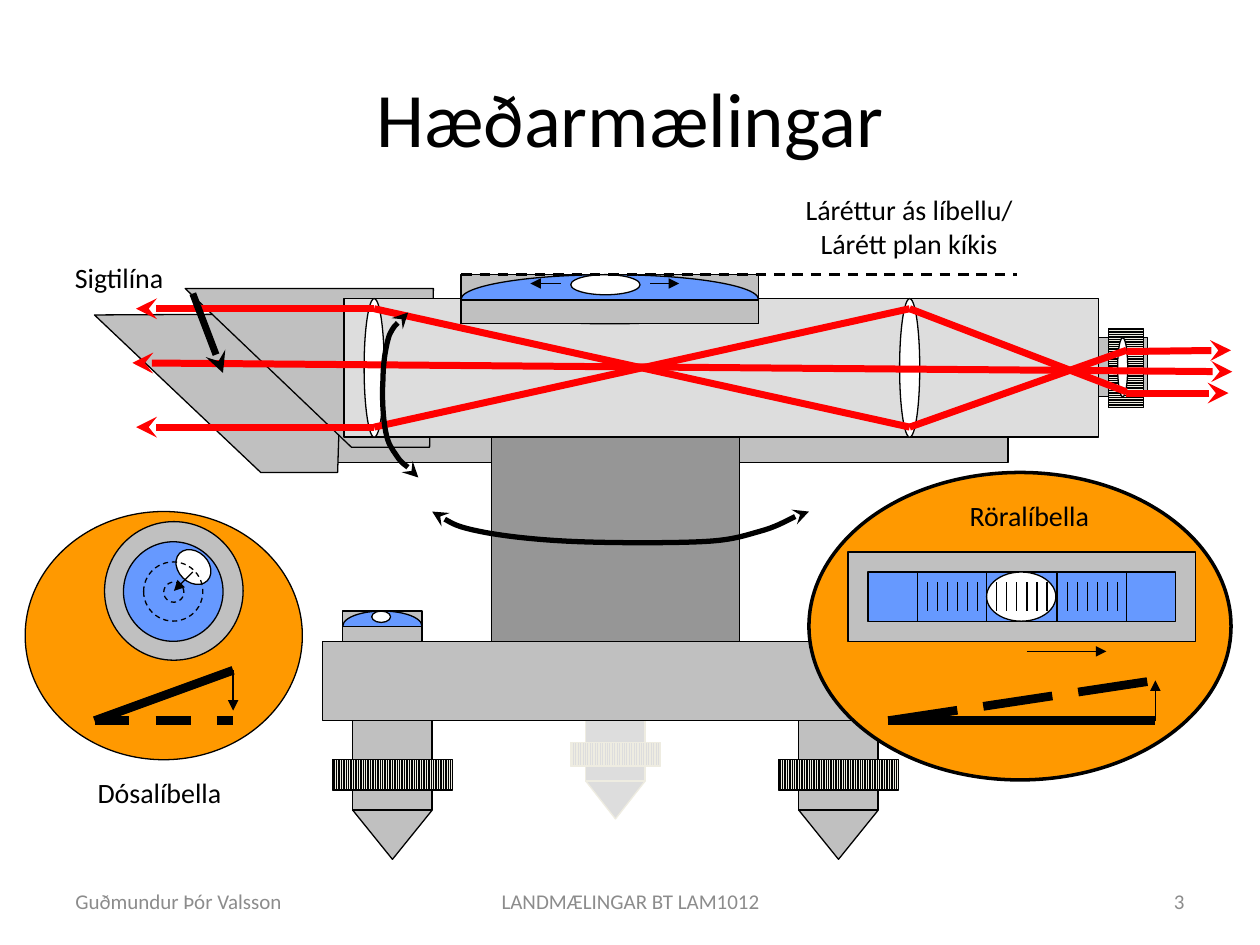
from pptx import Presentation
from pptx.dml.color import RGBColor
from pptx.enum.dml import MSO_LINE, MSO_PATTERN
from pptx.enum.shapes import MSO_CONNECTOR, MSO_SHAPE
from pptx.enum.text import MSO_ANCHOR, MSO_AUTO_SIZE, PP_ALIGN
from pptx.oxml.ns import qn
from pptx.util import Inches, Pt
from lxml.etree import SubElement

COLORS = {
    "black": "000000", "white": "FFFFFF", "cream": "EEECE1", "footer": "8C8C8C",
    "light": "DDDDDD", "metal": "C0C0C0", "dark": "969696",
    "ray": "FF0000", "liquid": "6699FF", "callout": "FF9900",
}
RECT, OVAL = MSO_SHAPE.RECTANGLE, MSO_SHAPE.OVAL


def rgb(name):
    return RGBColor.from_string(COLORS[name])


class Drawing:
    font = "Calibri"

    def __init__(self, slide):
        self.slide = slide
        self.shapes = slide.shapes

    def group(self):
        """Send the following elements to a new group."""
        self.shapes = self.slide.shapes.add_group_shape().shapes

    def ungroup(self):
        self.shapes = self.slide.shapes

    def outline(self, shape, color="black", width=0.75, dash=None, head=None, tail=None):
        shape.line.color.rgb = rgb(color)
        shape.line.width = Pt(width)
        if dash:
            shape.line.dash_style = dash
        line = shape.line._get_or_add_ln()
        for tag, kind in (("a:headEnd", head), ("a:tailEnd", tail)):
            if kind:
                SubElement(line, qn(tag), type=kind)

    def paint(self, shape, fill):
        shape.shadow.inherit = False
        if fill is None:
            shape.fill.background()
        else:
            shape.fill.solid()
            shape.fill.fore_color.rgb = rgb(fill)

    def shape(self, kind, box, fill=None, rotation=0, **outline):
        shape = self.shapes.add_shape(kind, *map(Inches, box))
        shape.rotation = rotation
        self.paint(shape, fill)
        self.outline(shape, **outline)
        return shape

    def knurl(self, box, front, back, pattern=MSO_PATTERN.LIGHT_VERTICAL, **style):
        """Draw a rectangle with a striped grip."""
        fill = self.shape(RECT, box, **style).fill
        fill.patterned()
        fill.pattern = pattern
        fill.fore_color.rgb = rgb(front)
        fill.back_color.rgb = rgb(back)

    def freeform(self, points, fill=None, closed=True, **outline):
        points = [(Inches(x), Inches(y)) for x, y in points]
        builder = self.shapes.build_freeform(*points[0])
        builder.add_line_segments(points[1:], close=closed)
        shape = builder.convert_to_shape()
        self.paint(shape, fill)
        self.outline(shape, **outline)
        return shape

    def curve(self, points, **outline):
        """Draw cubic curves: a start, then two controls and an end for each."""
        shape = self.freeform(points, closed=False, **outline)
        track = next(shape._element.iter(qn("a:path")))
        segments = track.findall(qn("a:lnTo"))
        for first in range(0, len(segments), 3):
            cubic = SubElement(track, qn("a:cubicBezTo"))
            for segment in segments[first:first + 3]:
                cubic.append(segment[0])
                track.remove(segment)

    def line(self, start, end, **outline):
        ends = map(Inches, (*start, *end))
        connector = self.shapes.add_connector(MSO_CONNECTOR.STRAIGHT, *ends)
        self.outline(connector, **outline)
        SubElement(connector._element.spPr, qn("a:effectLst"))

    def set_text(self, frame, text, size, color="black", align=PP_ALIGN.CENTER):
        frame.text = text
        for paragraph in frame.paragraphs:
            paragraph.alignment = align
            for run in paragraph.runs:
                run.font.name = self.font
                run.font.size = Pt(size)
                run.font.color.rgb = rgb(color)

    def title(self, text, box):
        title = self.slide.shapes.title
        title.left, title.top, title.width, title.height = map(Inches, box)
        title.text_frame.vertical_anchor = MSO_ANCHOR.MIDDLE
        self.set_text(title.text_frame, text, 44)

    def label(self, text, box):
        frame = self.shapes.add_textbox(*map(Inches, box)).text_frame
        frame.word_wrap = False
        frame.auto_size = MSO_AUTO_SIZE.SHAPE_TO_FIT_TEXT
        self.set_text(frame, text, 16)

    def footer(self, text, left, width, align):
        box = map(Inches, (left, 6.95, width, 0.4))
        frame = self.shapes.add_textbox(*box).text_frame
        frame.word_wrap = True
        frame.vertical_anchor = MSO_ANCHOR.MIDDLE
        self.set_text(frame, text, 12, "footer", align)

    def leg(self, box, tip, screw, fill, grip, color="black"):
        left, top, width, height = box
        bottom = top + height
        self.shape(RECT, box, fill, color=color)
        self.freeform([(left, bottom), (left + width, bottom), (left + width / 2, tip)],
                      fill, color=color)
        self.knurl(screw, *grip, color=color)

    def level(self, box, bubble, cover_top):
        left, top, width, height = box
        self.shape(RECT, box, "metal")
        self.shape(OVAL, box, "liquid")
        self.shape(OVAL, bubble, "white")
        self.shape(RECT, (left, cover_top, width, top + height - cover_top), "metal")


def draw_base(drawing):
    drawing.group()
    drawing.leg((4.65, 5.64, 0.47, 0.56), 6.5, (4.53, 5.89, 0.71, 0.19),
                "light", ("light", "cream"), "cream")
    drawing.shape(RECT, (2.56, 5.09, 4.65, 0.63), "metal")
    for left in (2.8, 6.34):
        drawing.leg((left, 5.72, 0.63, 0.71), 6.82, (left - 0.16, 6.03, 0.95, 0.24),
                    "metal", ("cream", "black"))
    drawing.shape(RECT, (2.01, 2.57, 5.99, 1.1), "metal")
    drawing.shape(RECT, (3.9, 2.73, 1.97, 2.36), "dark")
    drawing.freeform([(0.75, 2.5), (2.72, 2.49), (2.68, 3.75), (2.07, 3.75)], "metal")
    drawing.curve([(3.43, 4.06), (3.52, 4.12), (3.62, 4.18), (3.82, 4.22),
                   (4.02, 4.26), (4.32, 4.29), (4.61, 4.3), (4.9, 4.31), (5.32, 4.31),
                   (5.55, 4.3), (5.79, 4.29), (5.88, 4.26), (6.02, 4.22),
                   (6.17, 4.18), (6.37, 4.06), (6.42, 4.06)],
                  width=3, head="stealth", tail="stealth")


def draw_telescope(drawing):
    drawing.group()
    drawing.shape(RECT, (8.72, 2.68, 0.39, 0.47), "metal")
    drawing.knurl((8.62, 2.78, 0.63, 0.28), "cream", "black",
                  MSO_PATTERN.LIGHT_HORIZONTAL, rotation=270)
    drawing.freeform([(1.47, 2.29), (3.44, 2.29), (3.41, 3.55), (2.79, 3.55)], "metal")
    drawing.shape(RECT, (2.73, 2.37, 5.99, 1.1), "light")
    for lens in ((2.89, 2.37, 0.16, 1.1), (7.14, 2.37, 0.16, 1.1), (8.87, 2.68, 0.08, 0.47)):
        drawing.shape(OVAL, lens, "white")

    ray = {"color": "ray", "width": 4}
    upper, lower, front, back, eye = 2.45, 3.39, 2.97, 7.22, 8.94
    drawing.line((back, upper), (front, lower), **ray)
    drawing.line((front, upper), (back, lower), **ray)
    drawing.line((back, lower), (eye, 2.78), **ray)
    drawing.line((back, upper), (eye, 3.11), **ray)
    for height in (upper, lower):
        drawing.line((front, height), (1.08, height), tail="stealth", **ray)
    drawing.line((eye, 2.79), (9.77, 2.78), tail="stealth", **ray)
    drawing.line((eye, 3.12), (9.75, 3.12), tail="stealth", **ray)
    drawing.line((1.05, 2.88), (9.78, 2.95), head="stealth", tail="stealth", **ray)
    drawing.curve([(3.24, 2.48), (3.19, 2.53), (3.13, 2.58), (3.09, 2.66),
                   (3.06, 2.75), (3.04, 2.89), (3.04, 3.01), (3.03, 3.14), (3.04, 3.32),
                   (3.06, 3.42), (3.08, 3.53), (3.11, 3.56), (3.15, 3.62),
                   (3.19, 3.68), (3.31, 3.76), (3.32, 3.79)],
                  width=3, head="stealth", tail="stealth")

    drawing.group()
    drawing.level((3.66, 2.18, 2.36, 0.39), (4.53, 2.18, 0.55, 0.16), 2.38)
    drawing.ungroup()
    for start, end in ((5.16, 5.39), (4.45, 4.21)):
        drawing.line((start, 2.25), (end, 2.25), tail="triangle")


def draw_tube_level(drawing):
    drawing.group()
    drawing.shape(OVAL, (6.42, 3.75, 3.35, 2.44), "callout", width=2)
    drawing.shape(RECT, (6.73, 4.38, 2.76, 0.71), "metal")
    drawing.shape(RECT, (6.89, 4.54, 2.44, 0.39), "liquid")
    drawing.shape(OVAL, (7.83, 4.54, 0.55, 0.39), "white")
    dividers = (7.28, 7.83, 8.39, 8.94)
    for x in dividers:
        drawing.line((x, 4.54), (x, 4.93))
    for divider in dividers[:-1]:
        for count in range(1, 7):
            x = divider + 0.08 * count
            drawing.line((x, 4.62), (x, 4.85))
    drawing.line((7.05, 5.72), (9.17, 5.72), width=5)
    drawing.line((9.17, 5.72), (9.17, 5.4), tail="triangle")
    drawing.line((8.15, 5.17), (8.78, 5.17), tail="triangle")
    drawing.line((7.05, 5.72), (9.17, 5.4), width=5, dash=MSO_LINE.LONG_DASH)


def draw_circular_level(drawing):
    drawing.group()
    drawing.level((2.72, 4.85, 0.63, 0.24), (2.95, 4.85, 0.15, 0.09), 4.97)
    drawing.group()
    drawing.shape(OVAL, (0.2, 4.06, 2.2, 1.97), "callout")
    drawing.shape(OVAL, (0.83, 4.14, 1.1, 1.1), "metal")
    drawing.shape(OVAL, (0.98, 4.3, 0.79, 0.79), "liquid")
    drawing.shape(OVAL, (1.38, 4.38, 0.31, 0.24), "white", rotation=44.6)
    for ring in ((1.3, 4.62, 0.16, 0.16), (1.14, 4.46, 0.47, 0.47)):
        drawing.shape(OVAL, ring, dash=MSO_LINE.DASH)
    drawing.line((1.53, 4.54), (1.38, 4.69), tail="triangle")
    drawing.line((0.75, 5.72), (1.85, 5.32), width=5)
    drawing.line((1.85, 5.32), (1.85, 5.64), tail="triangle")
    drawing.line((0.75, 5.72), (1.85, 5.72), width=5, dash=MSO_LINE.DASH)


def draw_labels(drawing):
    drawing.ungroup()
    drawing.label("Dósalíbella", (0.67, 6.11, 1.19, 0.37))
    drawing.label("Röralíbella", (7.59, 3.91, 1.16, 0.37))
    drawing.group()
    drawing.label("Sigtilína", (0.49, 2.02, 0.91, 0.37))
    drawing.line((1.53, 2.33), (1.77, 2.96), width=4, tail="stealth")
    drawing.group()
    drawing.line((3.66, 2.18), (8.07, 2.18), width=1.5, dash=MSO_LINE.DASH)
    drawing.label("Láréttur ás líbellu/\nLárétt plan kíkis", (6.28, 1.48, 1.87, 0.64))


def main():
    presentation = Presentation()
    presentation.slide_width, presentation.slide_height = Inches(10), Inches(7.5)
    drawing = Drawing(presentation.slides.add_slide(presentation.slide_layouts[5]))
    drawing.title("Hæðarmælingar", (0.5, 0.3, 9, 1.25))
    drawing.footer("Guðmundur Þór Valsson", 0.5, 2.33, PP_ALIGN.LEFT)
    drawing.footer("LANDMÆLINGAR BT LAM1012", 3.42, 3.17, PP_ALIGN.CENTER)
    drawing.footer("3", 7.17, 2.33, PP_ALIGN.RIGHT)
    for draw in (draw_base, draw_telescope, draw_tube_level, draw_circular_level, draw_labels):
        draw(drawing)
    presentation.save("out.pptx")


if __name__ == "__main__":
    main()
